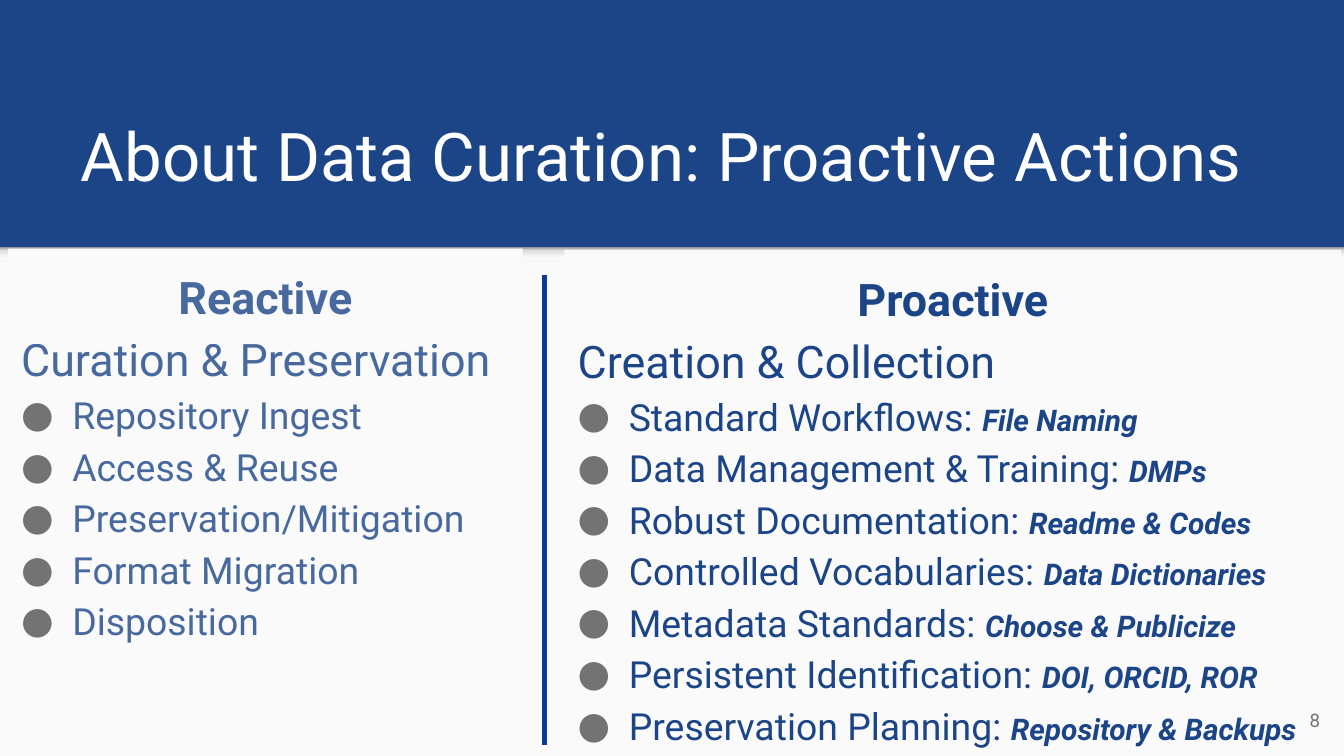
from lxml import etree
from pptx import Presentation
from pptx.dml.color import RGBColor
from pptx.enum.shapes import MSO_CONNECTOR, MSO_SHAPE
from pptx.enum.text import MSO_ANCHOR, MSO_AUTO_SIZE, PP_ALIGN
from pptx.oxml.ns import qn
from pptx.util import Inches, Pt

RECT = MSO_SHAPE.RECTANGLE
LINE = MSO_CONNECTOR.STRAIGHT
TOP, MIDDLE, BOTTOM = MSO_ANCHOR.TOP, MSO_ANCHOR.MIDDLE, MSO_ANCHOR.BOTTOM
LEFT, CENTER, RIGHT = PP_ALIGN.LEFT, PP_ALIGN.CENTER, PP_ALIGN.RIGHT
NO_FIT = MSO_AUTO_SIZE.NONE

WIDTH = 10
HEIGHT = WIDTH * 9 / 16
BAND = 1.84
FONT = "Roboto"
NAVY, PALE, GRAY, WHITE = "1C4587", "FAFAFA", "737373", "FFFFFF"
RULE = "093C92"
SHADE = [(0, "F9F9F9"), (36, "F9F9F9"), (80, "DEDEDE"), (100, "999999")]
INDENT = 0.38

REACTIVE = [
    ("Repository Ingest", ""),
    ("Access & Reuse", ""),
    ("Preservation/Mitigation", ""),
    ("Format Migration", ""),
    ("Disposition", ""),
]
PROACTIVE = [
    ("Standard Workflows: ", "File Naming"),
    ("Data Management & Training: ", "DMPs"),
    ("Robust Documentation: ", "Readme & Codes"),
    ("Controlled Vocabularies: ", "Data Dictionaries"),
    ("Metadata Standards: ", "Choose & Publicize"),
    ("Persistent Identification: ", "DOI, ORCID, ROR"),
    ("Preservation Planning: ", "Repository & Backups"),
]


def color(code):
    return RGBColor.from_string(code)


def place(shape, box):
    shape.left, shape.top, shape.width, shape.height = map(Inches, box)


def add_run(para, text, size, code, bold=False, italic=False, alpha=100):
    run = para.add_run()
    run.text = text
    font = run.font
    font.name, font.size = FONT, Pt(size)
    font.bold, font.italic = bold, italic
    font.color.rgb = color(code)
    if alpha < 100:
        tint = run._r.rPr.find(qn("a:solidFill"))[0]
        etree.SubElement(tint, qn("a:alpha"), val=str(alpha * 1000))


def set_frame(shape, anchor):
    frame = shape.text_frame
    frame.word_wrap, frame.auto_size = True, NO_FIT
    frame.vertical_anchor = anchor
    frame.margin_left = frame.margin_right = Inches(0.1)
    frame.margin_top = frame.margin_bottom = Inches(0.1)
    return frame


def add_block(slide, box):
    block = slide.shapes.add_shape(RECT, *map(Inches, box))
    block.shadow.inherit = False
    block.fill.solid()
    block.fill.fore_color.rgb = color(PALE)
    block.line.fill.background()
    return block


def add_shade(slide, box):
    """Strip that fades upward from pale to gray."""
    strip = add_block(slide, box)
    strip.fill.gradient()
    strip.fill.gradient_angle = 90
    stops = strip._element.spPr.find(qn("a:gradFill")).find(qn("a:gsLst"))
    for old in list(stops):
        stops.remove(old)
    for pos, code in SHADE:
        stop = etree.SubElement(stops, qn("a:gs"), pos=str(pos * 1000))
        etree.SubElement(stop, qn("a:srgbClr"), val=code)


def set_bullet(para):
    props = para._p.get_or_add_pPr()
    props.set("marL", str(Inches(INDENT)))
    props.set("indent", str(-Inches(INDENT)))
    tint = etree.SubElement(props, qn("a:buClr"))
    etree.SubElement(tint, qn("a:srgbClr"), val=GRAY)
    etree.SubElement(props, qn("a:buFont"), typeface=FONT)
    etree.SubElement(props, qn("a:buChar"), char="●")


def add_column(slide, box, head, lead, items, alpha=100):
    frame = set_frame(add_block(slide, box), TOP)

    def add_para(align=LEFT):
        para = frame.add_paragraph()
        para.alignment, para.line_spacing = align, 1.15
        return para

    title = frame.paragraphs[0]
    title.alignment, title.line_spacing = CENTER, 1.15
    add_run(title, head, 24, NAVY, bold=True, alpha=alpha)
    add_run(add_para(), lead, 24, NAVY, alpha=alpha)
    for text, note in items:
        para = add_para()
        set_bullet(para)
        add_run(para, text, 20, NAVY, alpha=alpha)
        if note:
            add_run(para, note, 16, NAVY, True, True, alpha)


def add_title(slide, box, text):
    title = slide.shapes.title
    place(title, box)
    para = set_frame(title, BOTTOM).paragraphs[0]
    para.alignment = LEFT
    add_run(para, text, 36, WHITE)


def add_rule(slide, x, top, end):
    rule = slide.shapes.add_connector(LINE, *map(Inches, (x, top, x, end)))
    rule.line.color.rgb, rule.line.width = color(RULE), Pt(3)
    etree.SubElement(rule._element.spPr, qn("a:effectLst"))


def add_number(slide, box, text):
    frame = set_frame(slide.shapes.add_textbox(*map(Inches, box)), MIDDLE)
    para = frame.paragraphs[0]
    para.alignment = RIGHT
    add_run(para, text, 10, GRAY)


def main():
    deck = Presentation()
    deck.slide_width, deck.slide_height = Inches(WIDTH), Inches(HEIGHT)
    slide = deck.slides.add_slide(deck.slide_layouts[5])
    slide.background.fill.solid()
    slide.background.fill.fore_color.rgb = color(NAVY)

    add_block(slide, (0, BAND, WIDTH, HEIGHT - BAND))
    add_shade(slide, (0, BAND, WIDTH, 0.12))
    add_title(slide, (0.5, 0.71, 8.99, 0.84),
              "About Data Curation: Proactive Actions")
    add_column(slide, (0.06, 1.85, 3.83, 3.3), "Reactive",
               "Curation & Preservation", REACTIVE, alpha=80)
    add_column(slide, (4.2, 1.86, 5.78, 3.76), "Proactive",
               "Creation & Collection", PROACTIVE)
    add_rule(slide, 4.05, 2.05, 5.54)
    add_number(slide, (9.32, 5.14, 0.6, 0.43), "8")
    deck.save("out.pptx")


if __name__ == "__main__":
    main()
